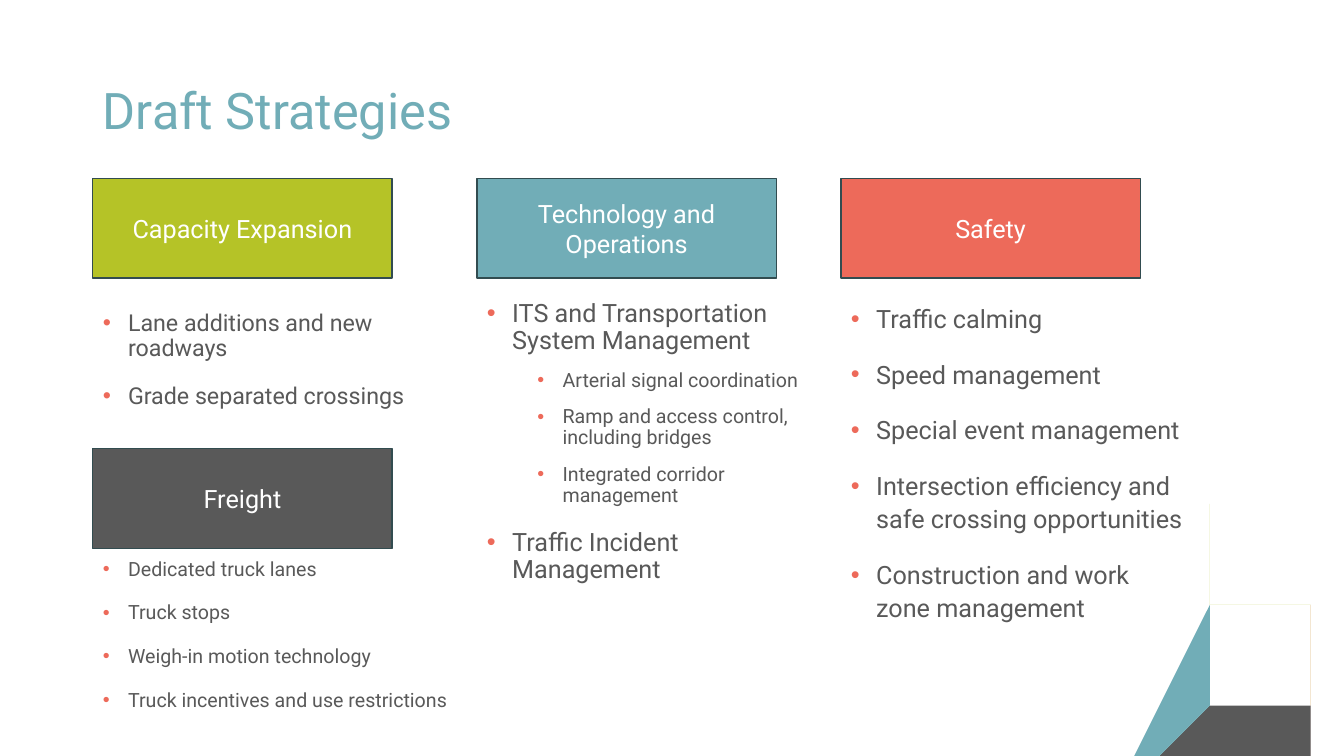
from dataclasses import dataclass

from lxml.etree import SubElement
from pptx import Presentation
from pptx.dml.color import RGBColor as RGB
from pptx.enum.shapes import MSO_SHAPE as Preset
from pptx.enum.text import MSO_ANCHOR as Anchor, MSO_AUTO_SIZE as AutoSize, PP_ALIGN as Align
from pptx.oxml.ns import qn
from pptx.util import Inches, Pt


@dataclass(frozen=True)
class Theme:
    font: str = "Roboto"
    green: str = "B5C327"
    teal: str = "71ADB7"
    coral: str = "ED6A5A"
    gray: str = "595959"
    outline: str = "324C50"
    white: str = "FFFFFF"
    title: float = 36
    large: float = 18
    medium: float = 16.6
    small: float = 14


THEME = Theme()
WIDTH, HEIGHT = 13.33, 7.5
COLUMNS = (0.92, 4.73, 8.34)
TOP_ROW, FREIGHT_ROW = 1.77, 4.45
HEADING_SIZE = (2.97, 0.99)
INDENT = 0.25
CURVE_STEPS = 16

HEADINGS = (
    ("Capacity Expansion", 0, TOP_ROW, THEME.green),
    ("Technology and Operations", 1, TOP_ROW, THEME.teal),
    ("Safety", 2, TOP_ROW, THEME.coral),
    ("Freight", 0, FREIGHT_ROW, THEME.gray),
)

CAPACITY = ((0, "Lane additions and new roadways"), (0, "Grade separated crossings"))
TECHNOLOGY = (
    (0, "ITS and Transportation System Management"),
    (1, "Arterial signal coordination"),
    (1, "Ramp and access control, including bridges"),
    (1, "Integrated corridor management"),
    (0, "Traffic Incident Management"),
)
SAFETY = (
    (0, "Traffic calming"),
    (0, "Speed management"),
    (0, "Special event management"),
    (0, "Intersection efficiency and safe crossing opportunities"),
    (0, "Construction and work zone management"),
)
FREIGHT = (
    (0, "Dedicated truck lanes"),
    (0, "Truck stops"),
    (0, "Weigh-in motion technology"),
    (0, "Truck incentives and use restrictions"),
)

STRATEGIES = (
    (CAPACITY, 0, 3.04, 3.37, 1.35, THEME.medium, 0.9),
    (TECHNOLOGY, 1, 2.93, 3.37, 3.84, THEME.large, 0.9),
    (SAFETY, 2, 2.93, 3.52, 3.36, THEME.large, 1.1),
    (FREIGHT, 0, 5.5, 4.75, 1.62, THEME.small, 0.9),
)

# fmt: off
PETALS = (
    (THEME.coral, ((13.02, 6.59), (12.72, 6.75), (12.88, 7.05)),
     ((13.13, HEIGHT), (WIDTH, HEIGHT), (WIDTH, 6.42))),
    (THEME.green, ((12.5, 6.36), (12.67, 6.66), (12.97, 6.5)),
     ((WIDTH, 6.3), (WIDTH, 5.66), ((12.33, 5.5), (12, 5.44), (12.16, 5.74)))),
    (THEME.gray, ((12.79, 7.1), (12.63, 6.8), (12.33, 6.96)),
     ((11.33, HEIGHT), (13.01, HEIGHT))),
    (THEME.teal, ((12.28, 6.87), (12.58, 6.71), (12.41, 6.41)),
     (((12.09, 5.82), (11.93, 5.52), (11.73, 5.8)), (10.51, HEIGHT), (11.11, HEIGHT))),
)
# fmt: on


def place(shape, left, top, width, height):
    shape.left, shape.top = Inches(left), Inches(top)
    shape.width, shape.height = Inches(width), Inches(height)


def style(paragraph, size, color):
    font = paragraph.font
    font.name, font.size, font.bold = THEME.font, Pt(size), False
    font.color.rgb = RGB.from_string(color)


def fill(shape, color):
    shape.shadow.inherit = False
    shape.fill.solid()
    shape.fill.fore_color.rgb = RGB.from_string(color)


def add_bullet(paragraph, indent):
    properties = paragraph._p.get_or_add_pPr()
    properties.set("marL", str(Inches(indent)))
    properties.set("indent", str(-Inches(INDENT)))
    bullet_color = SubElement(properties, qn("a:buClr"))
    SubElement(bullet_color, qn("a:srgbClr"), val=THEME.coral)
    SubElement(properties, qn("a:buFont"), typeface="Arial")
    SubElement(properties, qn("a:buChar"), char="•")


def write_title(title, text):
    place(title, COLUMNS[0], 0.4, 11.5, 1.45)
    frame = title.text_frame
    frame.text = text
    frame.auto_size = AutoSize.NONE
    frame.vertical_anchor = Anchor.MIDDLE
    heading = frame.paragraphs[0]
    heading.alignment, heading.line_spacing = Align.LEFT, 0.9
    style(heading, THEME.title, THEME.teal)


def write_list(body, items, column, top, width, height, size, spacing):
    place(body, COLUMNS[column], top, width, height)
    frame = body.text_frame
    frame.text = "\n".join(text for _, text in items)
    frame.word_wrap, frame.auto_size = True, AutoSize.NONE
    frame.vertical_anchor = Anchor.TOP
    for number, (paragraph, (level, _)) in enumerate(zip(frame.paragraphs, items)):
        paragraph.level = level
        add_bullet(paragraph, INDENT + 2 * INDENT * level)
        paragraph.line_spacing = spacing
        paragraph.space_before = Pt((5 if level else 10) if number else 0)
        paragraph.space_after = Pt(6)
        style(paragraph, THEME.small if level else size, THEME.gray)


def add_heading(slide, text, column, top, color):
    position = (COLUMNS[column], top, *HEADING_SIZE)
    box = slide.shapes.add_shape(Preset.RECTANGLE, *map(Inches, position))
    fill(box, color)
    box.line.color.rgb = RGB.from_string(THEME.outline)
    box.line.width = Pt(1)
    frame = box.text_frame
    frame.text, frame.word_wrap = text, True
    frame.vertical_anchor = Anchor.MIDDLE
    frame.paragraphs[0].alignment = Align.CENTER
    style(frame.paragraphs[0], THEME.large, THEME.white)


def round_corner(start, corner, end):
    steps = [step / CURVE_STEPS for step in range(CURVE_STEPS + 1)]
    return [
        tuple(
            a * ((1 - t) ** 3 + 3 * t * (1 - t) ** 2) + 3 * b * t**2 * (1 - t) + c * t**3
            for a, b, c in zip(start, corner, end)
        )
        for t in steps
    ]


def add_petal(emblem, color, inner_corner, rest):
    outline = round_corner(*inner_corner)
    for part in rest:
        outline += round_corner(*part) if len(part) == 3 else [part]
    builder = emblem.shapes.build_freeform(*outline[0], scale=Inches(1))
    builder.add_line_segments(outline[1:], close=True)
    petal = builder.convert_to_shape()
    fill(petal, color)
    petal.line.fill.background()


def add_emblem(slide):
    emblem = slide.shapes.add_group_shape()
    for petal in PETALS:
        add_petal(emblem, *petal)
    slide.shapes._spTree.insert(2, emblem._element)


def main():
    deck = Presentation()
    deck.slide_width, deck.slide_height = Inches(WIDTH), Inches(HEIGHT)
    slide = deck.slides.add_slide(deck.slide_layouts.get_by_name("Comparison"))
    title, *bodies = slide.placeholders
    write_title(title, "Draft Strategies")
    for body, strategy in zip(bodies, STRATEGIES):
        write_list(body, *strategy)
    for heading in HEADINGS:
        add_heading(slide, *heading)
    add_emblem(slide)
    deck.save("out.pptx")


if __name__ == "__main__":
    main()
